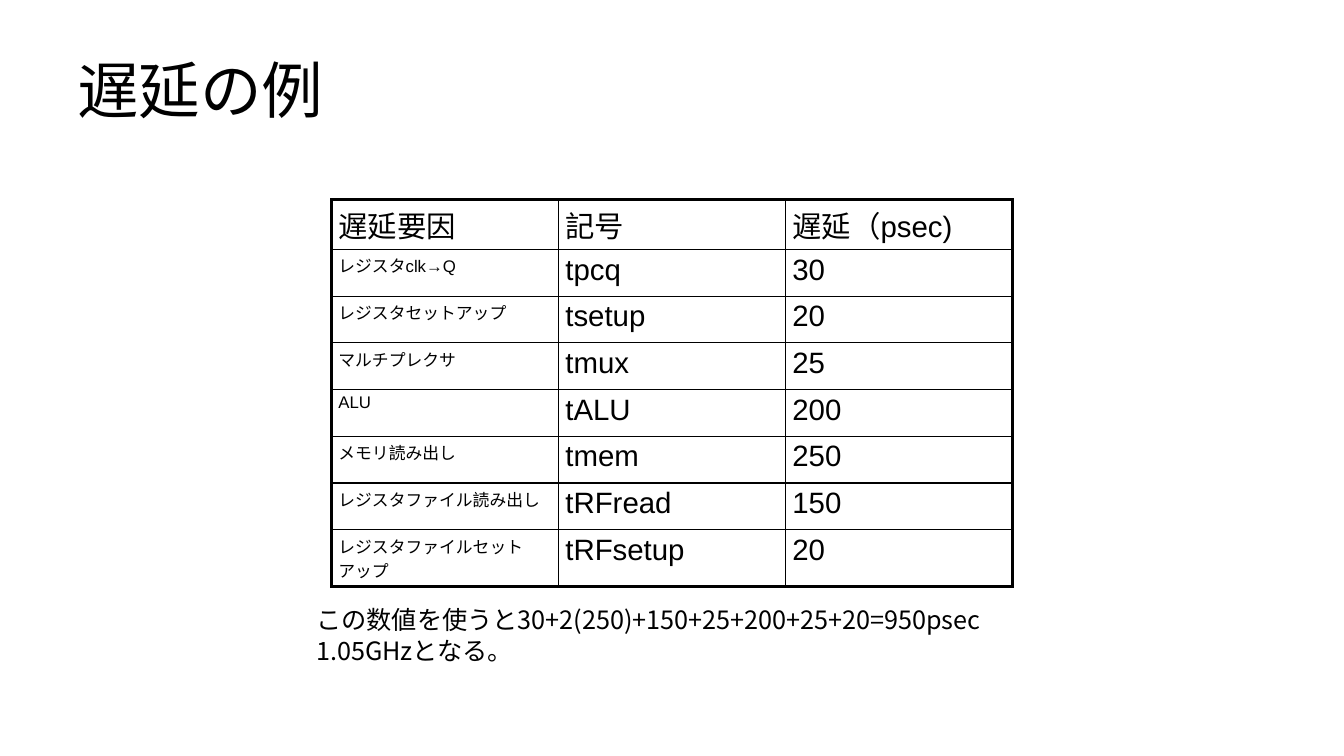
"""Build a slide that lists circuit delays in a table."""
from lxml import etree
from pptx import Presentation
from pptx.dml.color import RGBColor
from pptx.enum.text import MSO_ANCHOR
from pptx.oxml.ns import qn
from pptx.util import Inches, Pt

MIDDLE = MSO_ANCHOR.MIDDLE
TOP = MSO_ANCHOR.TOP
WIDTH, HEIGHT = Inches(13.33), Inches(7.5)
COLORS = {"ink": "000000"}
LATIN, JAPANESE = "Arial", "Noto Sans CJK JP"
THICK, THIN = Pt(2.25), Pt(1)
DELAYS = [
    ("遅延要因", "記号", "遅延（psec)"),
    ("レジスタclk→Q", "tpcq", "30"),
    ("レジスタセットアップ", "tsetup", "20"),
    ("マルチプレクサ", "tmux", "25"),
    ("ALU", "tALU", "200"),
    ("メモリ読み出し", "tmem", "250"),
    ("レジスタファイル読み出し", "tRFread", "150"),
    ("レジスタファイルセットアップ", "tRFsetup", "20"),
]
HEADER_ROW, BODY_ROW, WRAPPED_ROW = 6.6, 6.18, 7.55
ROW_HEIGHTS = [HEADER_ROW] + [BODY_ROW] * (len(DELAYS) - 2) + [WRAPPED_ROW]
SUMMARY = ["この数値を使うと30+2(250)+150+25+200+25+20=950psec", "1.05GHzとなる。"]


def across(percent):
    """Return a share of the slide's width."""
    return round(WIDTH * percent / 100)


def down(percent):
    """Return a share of the slide's height."""
    return round(HEIGHT * percent / 100)


def add_span(para, text, size, font):
    """Add one run with its Latin and East Asian fonts."""
    span = para.add_run()
    span.text = text
    span.font.size = Pt(size)
    span.font.name = font
    span.font.color.rgb = RGBColor.from_string(COLORS["ink"])
    east_asian = etree.Element(qn("a:ea"), typeface=JAPANESE)
    span.font._element.find(qn("a:latin")).addnext(east_asian)


def add_text(page, place, lines, size, anchor=TOP, line_spacing=None):
    """Add a text box with one paragraph per line."""
    left, top, width, height = place
    box = page.shapes.add_textbox(across(left), down(top), across(width), down(height))
    frame = box.text_frame
    frame.word_wrap = True
    frame.vertical_anchor = anchor
    for index, line in enumerate(lines):
        para = frame.add_paragraph() if index else frame.paragraphs[0]
        para.line_spacing = line_spacing
        add_span(para, line, size, JAPANESE)


def set_borders(cell, widths):
    """Draw the left, right, top and bottom borders of a cell."""
    properties = cell._tc.get_or_add_tcPr()
    for index, (side, width) in enumerate(zip("LRTB", widths)):
        line = etree.Element(qn(f"a:ln{side}"), w=str(width))
        fill = etree.SubElement(line, qn("a:solidFill"))
        etree.SubElement(fill, qn("a:srgbClr"), val=COLORS["ink"])
        properties.insert(index, line)


def fill_cell(cell, text, size):
    """Write a cell's text with a proportional space above it."""
    cell.fill.background()
    cell.margin_left = cell.margin_right = Inches(0.07)
    cell.margin_top = cell.margin_bottom = Inches(0.04)
    para = cell.text_frame.paragraphs[0]
    space = etree.SubElement(para._p.get_or_add_pPr(), qn("a:spcBef"))
    etree.SubElement(space, qn("a:spcPct"), val="20000")
    add_span(para, text, size, LATIN)


def add_delay_table(page, left, top, width):
    """Add the delay table with a thick outer frame."""
    last_row, last_column = len(DELAYS) - 1, len(DELAYS[0]) - 1
    frame = page.shapes.add_table(
        last_row + 1, last_column + 1, across(left), down(top),
        across(width), down(sum(ROW_HEIGHTS)))
    table = frame.table
    table.first_row = table.horz_banding = False
    for row, values in enumerate(DELAYS):
        table.rows[row].height = down(ROW_HEIGHTS[row])
        for column, value in enumerate(values):
            cell = table.cell(row, column)
            fill_cell(cell, value, 12 if row and not column else 21)
            outer = (column == 0, column == last_column, row == 0, row == last_row)
            set_borders(cell, [THICK if edge else THIN for edge in outer])


def main():
    """Build and save the deck."""
    deck = Presentation()
    deck.slide_width, deck.slide_height = WIDTH, HEIGHT
    page = deck.slides.add_slide(deck.slide_layouts[6])
    add_text(page, (5, 4, 90, 16.67), ["遅延の例"], 44, MIDDLE, 0.9)
    add_delay_table(page, 24.66, 26.4, 50.66)
    add_text(page, (22.8, 79.33, 53.86, 9.47), SUMMARY, 18)
    deck.save("out.pptx")


if __name__ == "__main__":
    main()
